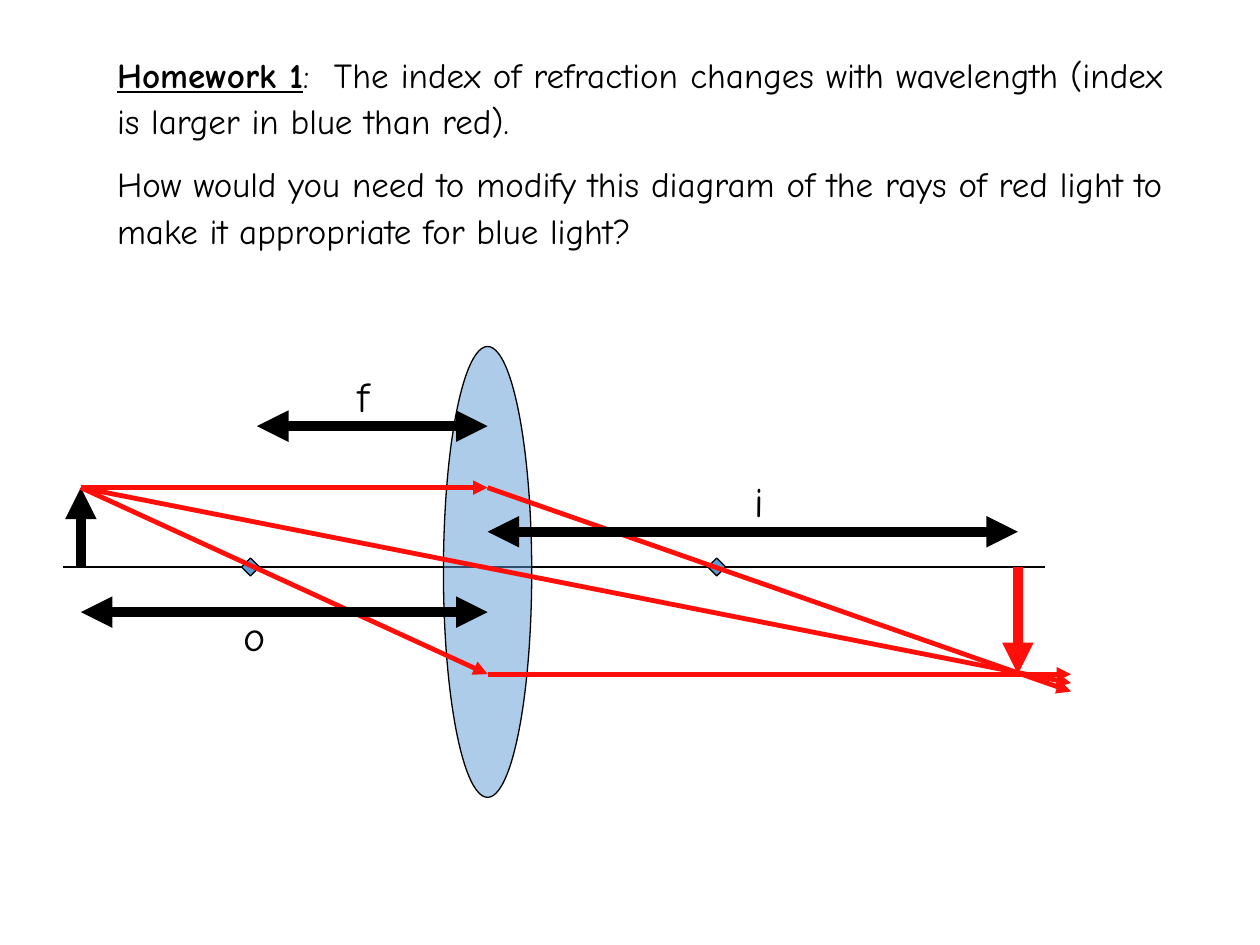
from dataclasses import dataclass

from pptx import Presentation
from pptx.dml.color import RGBColor
from pptx.enum.shapes import MSO_CONNECTOR, MSO_SHAPE
from pptx.enum.text import MSO_AUTO_SIZE, MSO_ANCHOR, PP_ALIGN
from pptx.oxml.ns import qn
from pptx.util import Cm, Pt
from lxml.etree import SubElement


@dataclass(frozen=True)
class Theme:
    font: str = "Comic Neue"
    black: RGBColor = RGBColor(0x00, 0x00, 0x00)
    red: RGBColor = RGBColor(0xFF, 0x0E, 0x0A)
    glass: RGBColor = RGBColor(0x5B, 0x9B, 0xD5)
    body_size: float = 20
    label_size: float = 24
    thin: float = 0.75
    ray: float = 2.75
    thick: float = 6


class Diagram:
    """Draws styled elements on one slide; lengths are in centimetres."""

    def __init__(self, slide, theme):
        self.s = slide
        self.theme = theme

    def _box(self, left, top, width, height, wrap):
        sp = self.s.shapes.add_textbox(Cm(left), Cm(top), Cm(width), Cm(height))
        tf = sp.text_frame
        tf.word_wrap = wrap
        tf.auto_size = MSO_AUTO_SIZE.SHAPE_TO_FIT_TEXT
        tf.vertical_anchor = MSO_ANCHOR.TOP
        return tf

    def _style(self, r, size, strong=False):
        r.font.name = self.theme.font
        r.font.size = Pt(size)
        r.font.color.rgb = self.theme.black
        r.font.bold = r.font.underline = strong

    def question(self, left, top, width, height, heading, paragraphs):
        tf = self._box(left, top, width, height, True)
        for i, text in enumerate(paragraphs):
            p = tf.add_paragraph() if i else tf.paragraphs[0]
            p.alignment = PP_ALIGN.JUSTIFY
            p.line_spacing = 1.1
            p.space_before = Pt(10 if i else 0)
            if i == 0:
                r = p.add_run()
                r.text = heading
                self._style(r, self.theme.body_size, strong=True)
            r = p.add_run()
            r.text = text
            self._style(r, self.theme.body_size)

    def label(self, text, center, top):
        width = 0.8
        tf = self._box(center - width / 2, top, width, 1.22, False)
        tf.text = text
        p = tf.paragraphs[0]
        p.alignment = PP_ALIGN.CENTER
        self._style(p.runs[0], self.theme.label_size)

    def shape(self, kind, center, width, height, alpha=None):
        x, y = center
        sp = self.s.shapes.add_shape(kind, Cm(x - width / 2), Cm(y - height / 2),
                                     Cm(width), Cm(height))
        sp.shadow.inherit = False
        sp.fill.solid()
        sp.fill.fore_color.rgb = self.theme.glass
        sp.line.color.rgb = self.theme.black
        sp.line.width = Pt(self.theme.thin)
        if alpha is not None:
            color = sp.fill._xPr.find(qn("a:solidFill"))[0]
            SubElement(color, qn("a:alpha")).set("val", str(alpha * 1000))

    def line(self, start, end, color, width, arrows=()):
        cx = self.s.shapes.add_connector(MSO_CONNECTOR.STRAIGHT,
                                         *map(Cm, start), *map(Cm, end))
        cx.line.color.rgb = color
        cx.line.width = Pt(width)
        ln = cx.line._get_or_add_ln()
        for tag in arrows:
            SubElement(ln, qn(tag)).set("type", "triangle")
        SubElement(cx._element.spPr, qn("a:effectLst"))

    def ray(self, start, end):
        self.line(start, end, self.theme.red, self.theme.ray, ["a:tailEnd"])

    def upright(self, start, end, color):
        self.line(start, end, color, self.theme.thick, ["a:tailEnd"])

    def distance(self, x1, x2, y):
        self.line((x1, y), (x2, y), self.theme.black, self.theme.thick,
                  ["a:headEnd", "a:tailEnd"])


def main():
    prs = Presentation()
    prs.slide_width, prs.slide_height = Cm(25.4), Cm(19.05)
    theme = Theme()
    d = Diagram(prs.slides.add_slide(prs.slide_layouts[6]), theme)

    # Question
    d.question(2.11, 0.86, 21.59, 5.08, "Homework 1", [
        ":  The index of refraction changes with wavelength "
        "(index is larger in blue than red).",
        "How would you need to modify this diagram of the rays of red light "
        "to make it appropriate for blue light?",
    ])

    # Key positions of the optics
    axis_y, lens_x, ray_end = 11.43, 9.83, 21.59
    object_x, object_y = 1.63, 9.83
    image_x, image_y = 20.52, 13.59
    object_tip = (object_x, object_y)

    # Axis and lens
    d.line((1.27, axis_y), (21.06, axis_y), theme.black, theme.thin)
    d.shape(MSO_SHAPE.OVAL, (lens_x, 11.53), 1.78, 9.09, alpha=50)

    # Ray through the lens centre, then the two focal points
    d.ray(object_tip, (ray_end, 13.77))
    for focus_x in (14.45, 5.05):
        d.shape(MSO_SHAPE.DIAMOND, (focus_x, axis_y), 0.36, 0.36)

    # Object, remaining rays and image
    d.upright((object_x, axis_y), object_tip, theme.black)
    for bend_y, end_y in ((object_y, 13.94), (image_y, image_y)):
        d.ray(object_tip, (lens_x, bend_y))
        d.ray((lens_x, bend_y), (ray_end, end_y))
    d.upright((image_x, axis_y), (image_x, image_y), theme.red)

    # Distances
    d.distance(5.18, lens_x, 8.59)
    d.distance(lens_x, image_x, 10.72)
    d.distance(object_x, lens_x, 12.34)

    # Distance labels
    for text, center, top in (("f", 7.33, 7.34), ("o", 5.05, 12.17),
                              ("i", 15.3, 9.47)):
        d.label(text, center, top)

    prs.save("out.pptx")


if __name__ == "__main__":
    main()
